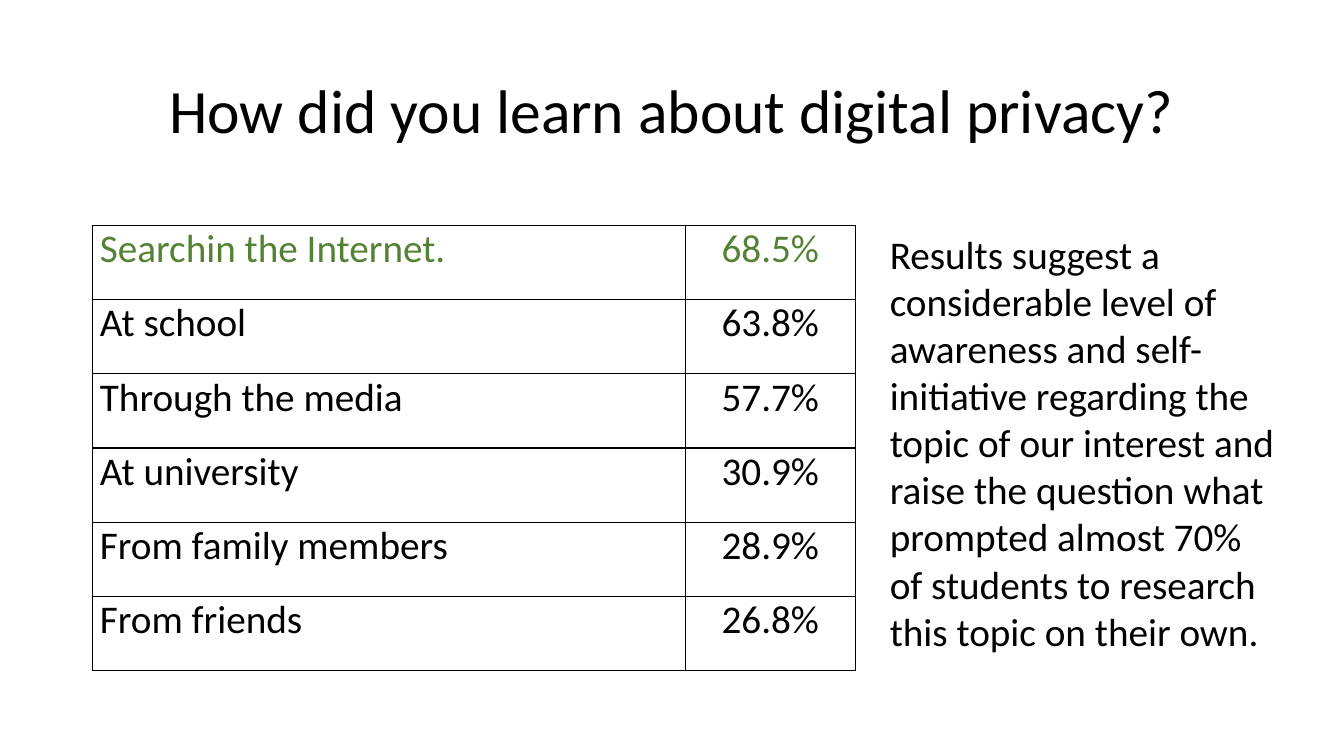
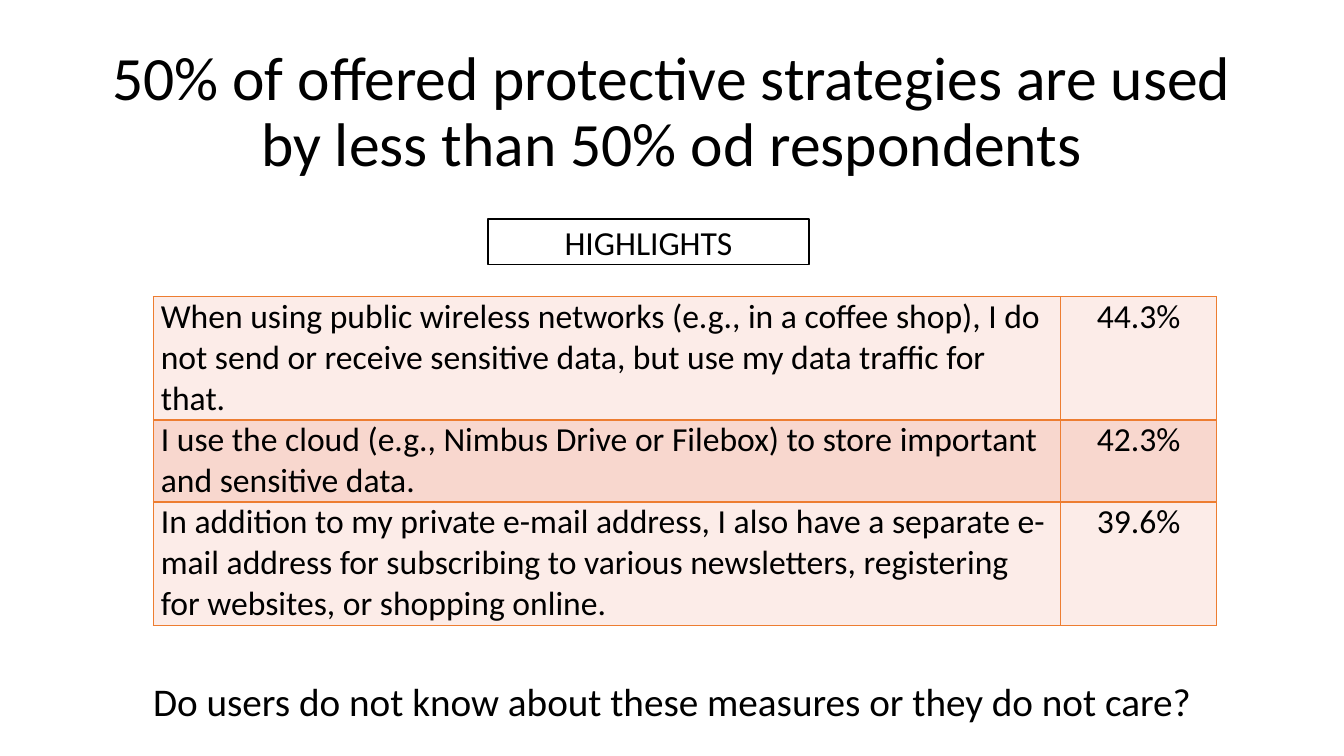
from lxml.etree import SubElement
from pptx import Presentation
from pptx.dml.color import RGBColor
from pptx.enum.shapes import MSO_SHAPE
from pptx.enum.text import MSO_ANCHOR, PP_ALIGN
from pptx.oxml.ns import qn
from pptx.util import Pt

# Shared look
FONT = "Calibri"
BLACK = RGBColor(0x00, 0x00, 0x00)
WHITE = RGBColor(0xFF, 0xFF, 0xFF)
GREEN = RGBColor(0x54, 0x82, 0x35)
ORANGE = RGBColor(0xED, 0x7D, 0x31)
PALE_PEACH = RGBColor(0xFC, 0xEC, 0xE8)
PEACH = RGBColor(0xF8, 0xD7, 0xCE)
CELL_MARGIN = Pt(5.4)

LEARNING_SOURCES = [
    ("Searchin the Internet.", "68.5%"),
    ("At school", "63.8%"),
    ("Through the media", "57.7%"),
    ("At university", "30.9%"),
    ("From family members", "28.9%"),
    ("From friends", "26.8%"),
]
STRATEGIES = [
    ("When using public wireless networks (e.g., in a coffee shop), I do not "
     "send or receive sensitive data, but use my data traffic for that.", "44.3%"),
    ("I use the cloud (e.g., Nimbus Drive or Filebox) to store important and "
     "sensitive data.", "42.3%"),
    ("In addition to my private e-mail address, I also have a separate e-mail "
     "address for subscribing to various newsletters, registering for websites, "
     "or shopping online.", "39.6%"),
]


def write(frame, text, size=28, color=BLACK, align=PP_ALIGN.LEFT,
          anchor=MSO_ANCHOR.TOP, line_spacing=None, space_after=None):
    frame.word_wrap = True
    frame.vertical_anchor = anchor
    paragraph = frame.paragraphs[0]
    paragraph.alignment = align
    paragraph.line_spacing = line_spacing
    paragraph.space_after = space_after
    run = paragraph.add_run()
    run.text = text
    run.font.name = FONT
    run.font.size = Pt(size)
    run.font.color.rgb = color


def add_text(slide, left, top, width, height, text, **text_format):
    box = slide.shapes.add_textbox(Pt(left), Pt(top), Pt(width), Pt(height))
    write(box.text_frame, text, **text_format)


def add_title(slide, text):
    add_text(slide, 66, 28.75, 828, 104.4, text, size=44, align=PP_ALIGN.CENTER,
             anchor=MSO_ANCHOR.MIDDLE, line_spacing=0.9)


def add_framed_label(slide, left, top, width, height, text):
    label = slide.shapes.add_shape(MSO_SHAPE.RECTANGLE, Pt(left), Pt(top),
                                   Pt(width), Pt(height))
    label.shadow.inherit = False
    label.fill.solid()
    label.fill.fore_color.rgb = WHITE
    label.line.color.rgb = BLACK
    label.line.width = Pt(1)
    write(label.text_frame, text, size=24, align=PP_ALIGN.CENTER,
          anchor=MSO_ANCHOR.MIDDLE)


def set_borders(cell, color):
    properties = cell._tc.get_or_add_tcPr()
    for position, side in enumerate(("a:lnL", "a:lnR", "a:lnT", "a:lnB")):
        border = SubElement(properties, qn(side), w=str(Pt(1)))
        fill = SubElement(border, qn("a:solidFill"))
        SubElement(fill, qn("a:srgbClr"), val=str(color))
        properties.insert(position, border)


def add_share_table(slide, left, top, column_widths, row_heights, rows, size,
                    border, bands=(None,), label_align=PP_ALIGN.LEFT,
                    first_color=BLACK):
    """Draw label and percentage rows; bands are the repeating row fills."""
    table = slide.shapes.add_table(
        len(rows), len(column_widths), Pt(left), Pt(top),
        Pt(sum(column_widths)), Pt(sum(row_heights))).table
    table.first_row = table.horz_banding = False
    for column, width in zip(table.columns, column_widths):
        column.width = Pt(width)
    for index, (row, height, texts) in enumerate(zip(table.rows, row_heights, rows)):
        row.height = Pt(height)
        band = bands[index % len(bands)]
        color = BLACK if index else first_color
        for cell, text, align in zip(row.cells, texts, (label_align, PP_ALIGN.CENTER)):
            cell.margin_left = cell.margin_right = CELL_MARGIN
            cell.margin_top = cell.margin_bottom = 0
            if band is None:
                cell.fill.background()
            else:
                cell.fill.solid()
                cell.fill.fore_color.rgb = band
            set_borders(cell, border)
            write(cell.text_frame, text, size=size, color=color, align=align,
                  space_after=Pt(0))


def build_learning_slide(slide):
    add_title(slide, "How did you learn about digital privacy?")
    add_share_table(slide, 66, 161, (423.5, 121.5), [53] * len(LEARNING_SOURCES),
                    LEARNING_SOURCES, size=28, border=BLACK,
                    label_align=PP_ALIGN.JUSTIFY, first_color=GREEN)
    add_text(slide, 628.5, 161, 293, 312.5,
             "Results suggest a considerable level of awareness and self-initiative "
             "regarding the topic of our interest and raise the question what prompted "
             "almost 70% of students to research this topic on their own.")


def build_strategies_slide(slide):
    add_title(slide, "50% of offered protective strategies are used by less than "
                     "50% od respondents")
    add_share_table(slide, 109.5, 212, (648, 111.5), (88, 58.6, 88), STRATEGIES,
                    size=24, border=ORANGE, bands=(PALE_PEACH, PEACH))
    add_text(slide, 94.5, 480, 771, 41,
             "Do users do not know about these measures or they do not care?",
             align=PP_ALIGN.CENTER)
    add_framed_label(slide, 348.5, 156.5, 229.5, 32.5, "HIGHLIGHTS")


def main():
    deck = Presentation()
    deck.slide_width, deck.slide_height = Pt(960), Pt(540)
    blank = deck.slide_layouts[6]
    for build in (build_learning_slide, build_strategies_slide):
        build(deck.slides.add_slide(blank))
    deck.save("out.pptx")


if __name__ == "__main__":
    main()
